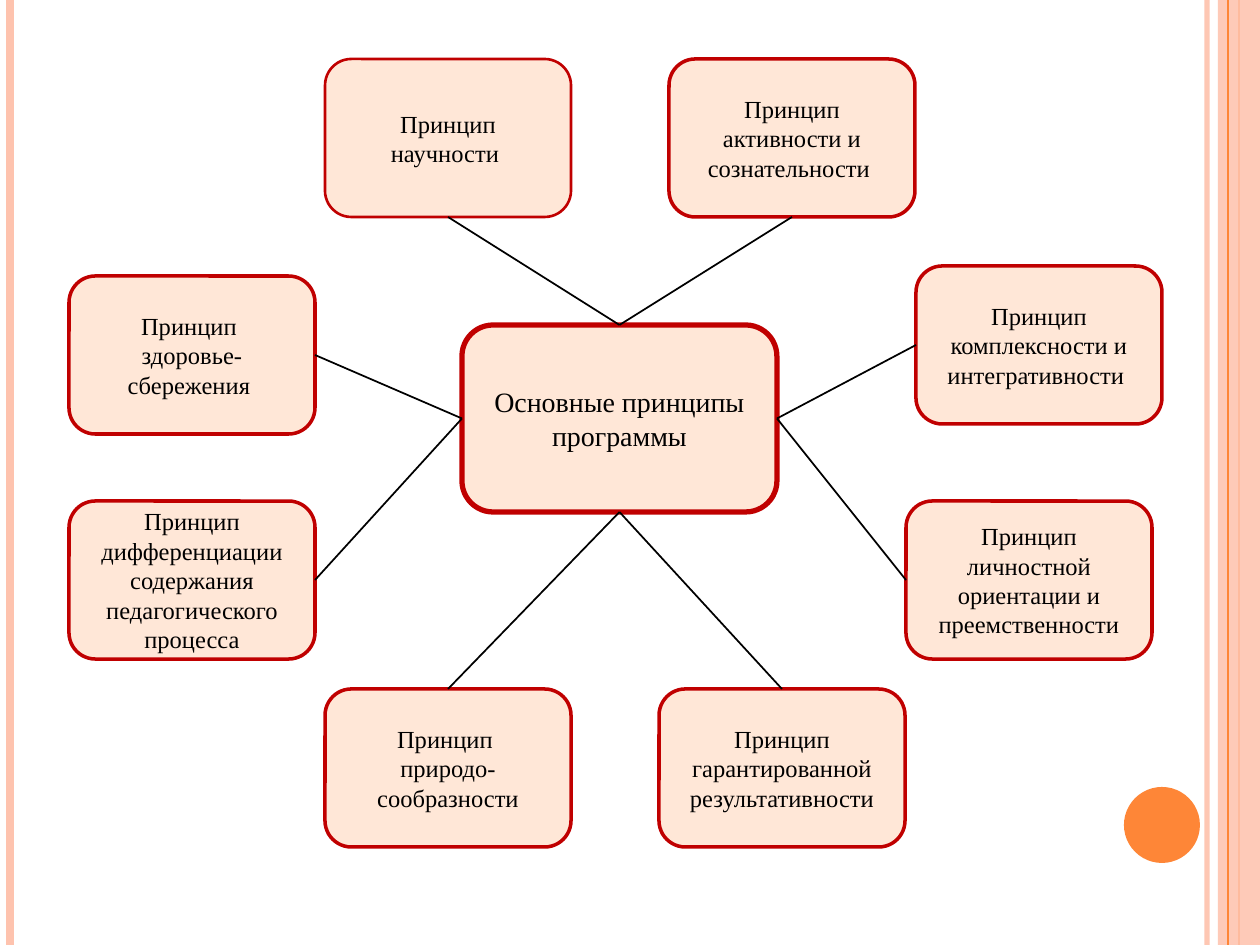
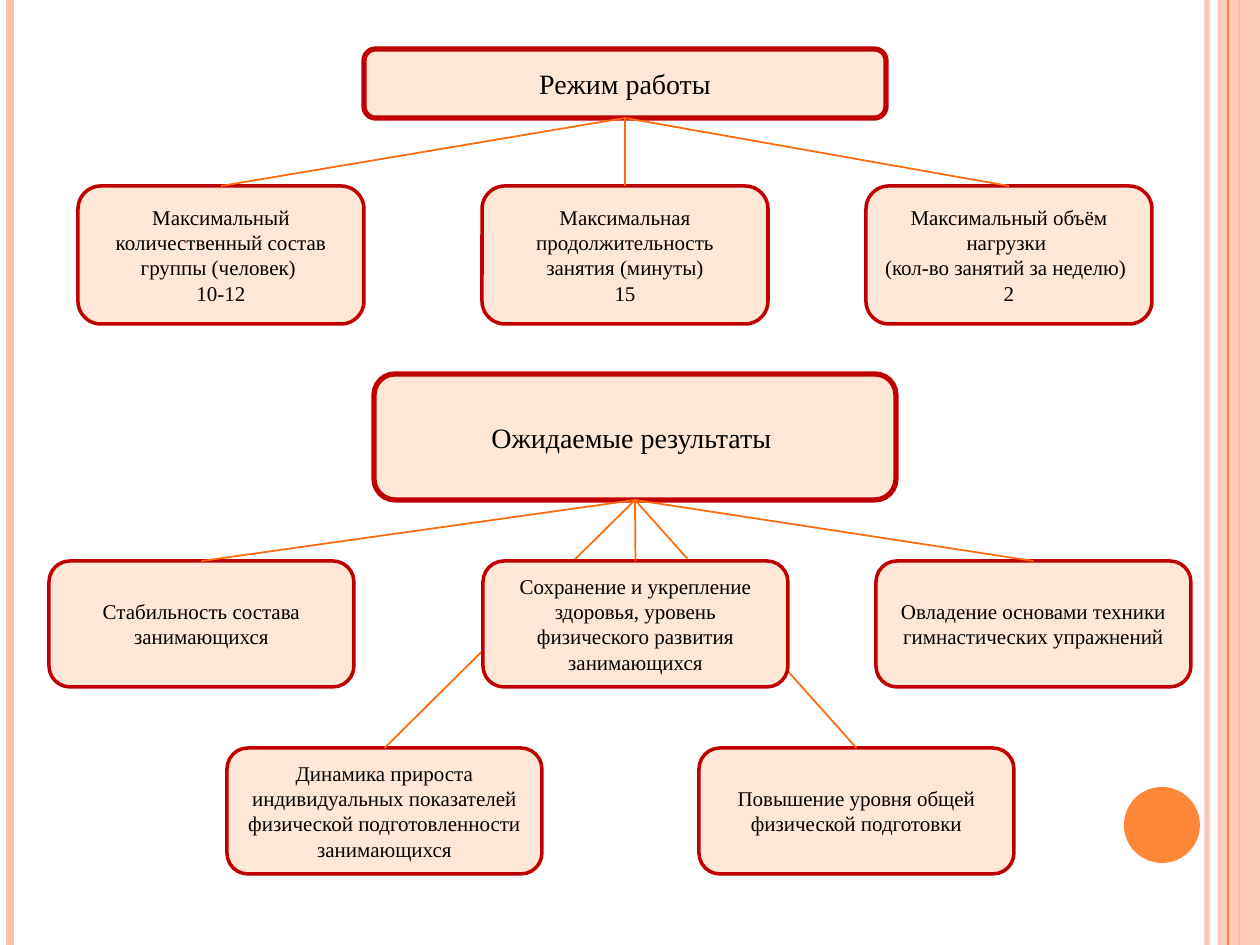
from collections import namedtuple

from lxml import etree
from pptx import Presentation
from pptx.dml.color import RGBColor
from pptx.enum.shapes import MSO_CONNECTOR, MSO_SHAPE
from pptx.enum.text import MSO_ANCHOR, PP_ALIGN
from pptx.oxml.ns import qn
from pptx.util import Emu, Pt

STRAIGHT = MSO_CONNECTOR.STRAIGHT
RECTANGLE, ROUNDED, OVAL = MSO_SHAPE.RECTANGLE, MSO_SHAPE.ROUNDED_RECTANGLE, MSO_SHAPE.OVAL
MIDDLE = MSO_ANCHOR.MIDDLE
LEFT, CENTER = PP_ALIGN.LEFT, PP_ALIGN.CENTER
TOP_SIDE, LEFT_SIDE, BOTTOM_SIDE, RIGHT_SIDE = range(4)

PX_PER_INCH = 126
PAGE_WIDTH, PAGE_HEIGHT = 1260, 945
FONT = "Times New Roman"
BLACK, CREAM, DARK_RED = "000000", "FFE7D7", "C00000"
PINK, ORANGE, BRIGHT_ORANGE = "FEC3AE", "FE8637", "FF6B0A"

Box = namedtuple("Box", "left top width height")


def px(length):
    return Emu(round(length * 914400 / PX_PER_INCH))


def rgb(value):
    return RGBColor.from_string(value)


def inside(box, left, top, width, height):
    """Turn offsets within a box into a box on the page."""
    return Box(box.left + left, box.top + top, width, height)


def set_opacity(part, percent):
    color = next(part._element.spPr.iter(qn("a:srgbClr")))
    etree.SubElement(color, qn("a:alpha"), val=str(percent * 1000))


def add_line(page, color, weight, start=(0, 0), end=(0, 0)):
    line = page.shapes.add_connector(STRAIGHT, *map(px, (*start, *end)))
    line.line.color.rgb = rgb(color)
    line.line.width = Pt(weight)
    etree.SubElement(line._element.spPr, qn("a:effectLst"))
    return line


def join(page, hub, hub_side, card, card_side, color):
    line = add_line(page, color, 1)
    line.begin_connect(hub, hub_side)
    line.end_connect(card, card_side)


def add_filled(page, kind, box, fill):
    shape = page.shapes.add_shape(kind, *map(px, box))
    shape.shadow.inherit = False
    shape.fill.solid()
    shape.fill.fore_color.rgb = rgb(fill)
    shape.line.fill.background()
    return shape


def add_card(page, box, text, size, border=2):
    card = add_filled(page, ROUNDED, box, CREAM)
    card.line.color.rgb = rgb(DARK_RED)
    card.line.width = Pt(border)
    frame = card.text_frame
    frame.word_wrap = True
    frame.vertical_anchor = MIDDLE
    frame.text = text
    for para in frame.paragraphs:
        para.alignment = CENTER
        para.font.name = FONT
        para.font.size = Pt(size)
        para.font.color.rgb = rgb(BLACK)
    return card


def add_hub(page, box, text):
    return add_card(page, box, text, 16, 3)


def add_side_bands(page, box):
    def stripe(offset, color, weight):
        x = box.left + offset
        return add_line(page, color, weight, (x, box.top), (x, box.top + box.height))

    set_opacity(stripe(1207, PINK, 3), 93)
    stripe(10, PINK, 4.5)
    stripe(1239, ORANGE, 1.5)
    band = add_filled(page, RECTANGLE, inside(box, 1218, 0, 42, box.height), PINK)
    set_opacity(band, 87)
    stripe(1228, ORANGE, 0.75)
    add_filled(page, OVAL, inside(box, 1124, 787, 76, 76), ORANGE)


def add_principles(page, box):
    """Place eight principles around the hub, each joined to its nearest side."""
    hub = add_hub(page, inside(box, 393, 266, 315, 187), "Основные принципы программы")
    width, height = 246, 158
    bottom = box.height - height
    principles = [
        (256, 0, TOP_SIDE, BOTTOM_SIDE, "Принцип научности ", 1.5),
        (600, 0, TOP_SIDE, BOTTOM_SIDE, "Принцип активности и сознательности ", 2),
        (0, 217, LEFT_SIDE, RIGHT_SIDE, "Принцип \nздоровье-сбережения ", 2),
        (0, 442, LEFT_SIDE, RIGHT_SIDE,
         "Принцип дифференциации содержания педагогического процесса", 2),
        (847, 207, RIGHT_SIDE, LEFT_SIDE, "Принцип комплексности и интегративности ", 2),
        (837, 442, RIGHT_SIDE, LEFT_SIDE,
         "Принцип личностной ориентации и преемственности", 2),
        (256, bottom, BOTTOM_SIDE, TOP_SIDE, "Принцип \nприродо-сообразности", 2),
        (590, bottom, BOTTOM_SIDE, TOP_SIDE,
         "Принцип гарантированной результативности", 2),
    ]
    for left, top, hub_side, card_side, text, border in principles:
        card = add_card(page, inside(box, left, top, width, height), text, 14, border)
        join(page, hub, hub_side, card, card_side, BLACK)


def add_branches(page, box, hub, height, branches):
    """Add cards below a hub, each joined to it, and return the cards."""
    cards = []
    for left, top, width, text in branches:
        card = add_card(page, inside(box, left, top, width, height), text, 12)
        join(page, hub, BOTTOM_SIDE, card, TOP_SIDE, BRIGHT_ORANGE)
        cards.append(card)
    return cards


def add_schedule(page, box):
    hub = add_hub(page, inside(box, 286, 0, 522, 69), "Режим работы")
    limits = [
        (0, 137, 286, "Максимальный количественный состав группы (человек) \n10-12"),
        (404, 137, 286, "Максимальная продолжительность занятия (минуты)\n15"),
        (788, 137, 286, "Максимальный объём нагрузки \n(кол-во занятий за неделю)\n2"),
    ]
    load_card = add_branches(page, box, hub, 138, limits)[-1]
    load_card.text_frame.paragraphs[1].alignment = LEFT


def add_results(page, box):
    """Place the health card last, so that it covers the lines to the lower row."""
    hub = add_hub(page, inside(box, 325, 0, 522, 126), "Ожидаемые результаты ")
    results = [
        (0, 187, 305, "Стабильность состава занимающихся"),
        (827, 187, 315, "Овладение основами техники гимнастических упражнений"),
        (178, 374, 315, "Динамика прироста индивидуальных показателей "
                        "физической подготовленности занимающихся"),
        (650, 374, 315, "Повышение уровня общей физической подготовки"),
        (434, 187, 305, "Сохранение и укрепление здоровья, уровень "
                        "физического развития занимающихся"),
    ]
    add_branches(page, box, hub, 126, results)


def add_page(deck):
    page = deck.slides.add_slide(deck.slide_layouts[6])
    add_side_bands(page, Box(0, 0, PAGE_WIDTH, PAGE_HEIGHT))
    return page


def main():
    deck = Presentation()
    deck.slide_width, deck.slide_height = px(PAGE_WIDTH), px(PAGE_HEIGHT)
    add_principles(add_page(deck), Box(69, 59, 1093, 788))
    program_page = add_page(deck)
    add_schedule(program_page, Box(78, 49, 1074, 275))
    add_results(program_page, Box(49, 374, 1142, 500))
    deck.save("out.pptx")


if __name__ == "__main__":
    main()
